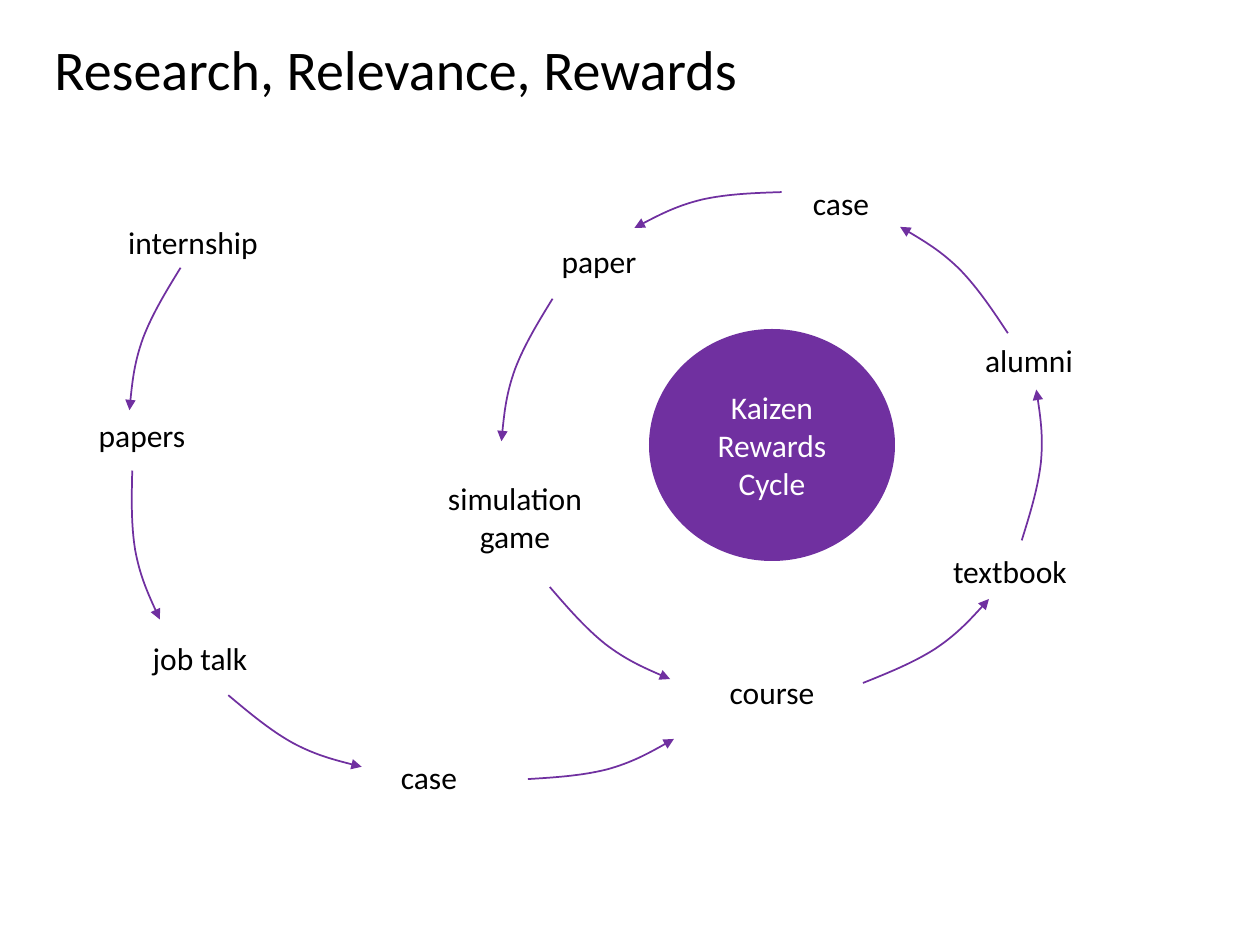
from lxml import etree
from pptx import Presentation
from pptx.dml.color import RGBColor
from pptx.enum.shapes import MSO_SHAPE
from pptx.enum.text import MSO_ANCHOR, MSO_AUTO_SIZE, PP_ALIGN
from pptx.oxml.ns import qn
from pptx.util import Emu, Pt

EMU_PER_PX = 914400 / 126
PURPLE = RGBColor(0x70, 0x30, 0xA0)
BLACK = RGBColor(0x00, 0x00, 0x00)
WHITE = RGBColor(0xFF, 0xFF, 0xFF)
FONT = "Calibri"
OVAL = MSO_SHAPE.OVAL
MIDDLE = MSO_ANCHOR.MIDDLE
FIT_TEXT = MSO_AUTO_SIZE.SHAPE_TO_FIT_TEXT
LEFT, CENTER = PP_ALIGN.LEFT, PP_ALIGN.CENTER

LABEL_WIDTH = 200
LINE_HEIGHT = 50
LABELS = [
    ("internship", 93, 217),
    ("papers", 42, 410),
    ("job talk", 100, 633),
    ("case", 329, 752),
    ("course", 672, 667),
    ("textbook", 910, 546),
    ("alumni", 929, 335),
    ("case", 741, 178),
    ("paper", 499, 236),
]

ARC_START = (0, 84)
ARC_CURVES = [
    [(25, 74), (50, 64), (72, 50)],
    [(93, 36), (110, 18), (126, 0)],
]
ARCS = [
    (863, 599, 0),
    (891, 238, 258.3),
    (645, 168, 200),
    (464, 328, 143.4),
    (547, 591, 71.1),
    (966, 423, 309.2),
    (92, 297, 143.4),
    (83, 503, 113.2),
    (232, 689, 61.9),
    (538, 717, 18.3),
]


def px(value):
    return Emu(round(value * EMU_PER_PX))


def style_paragraph(paragraph, size, color, alignment):
    paragraph.alignment = alignment
    paragraph.font.name = FONT
    paragraph.font.size = Pt(size)
    paragraph.font.color.rgb = color


def add_text(slide, text, left, top, width, height, size=18, alignment=CENTER, wrap=True):
    box = slide.shapes.add_textbox(px(left), px(top), px(width), px(height))
    frame = box.text_frame
    frame.word_wrap = wrap
    frame.auto_size = FIT_TEXT
    frame.text = text
    style_paragraph(frame.paragraphs[0], size, BLACK, alignment)


def add_circle(slide, text, left, top, width, height):
    circle = slide.shapes.add_shape(OVAL, px(left), px(top), px(width), px(height))
    circle.shadow.inherit = False
    circle.fill.solid()
    circle.fill.fore_color.rgb = PURPLE
    circle.line.fill.background()
    frame = circle.text_frame
    frame.word_wrap = True
    frame.vertical_anchor = MIDDLE
    frame.text = text
    for paragraph in frame.paragraphs:
        style_paragraph(paragraph, 18, WHITE, CENTER)


def bend_segments(shape):
    segments = list(shape.element.iter(qn("a:lnTo")))
    for first in range(0, len(segments), 3):
        curve = etree.Element(qn("a:cubicBezTo"))
        segments[first].addprevious(curve)
        for segment in segments[first:first + 3]:
            curve.append(segment[0])
            segment.getparent().remove(segment)


def add_arc_arrow(slide, left, top, rotation):
    builder = slide.shapes.build_freeform(*ARC_START, scale=EMU_PER_PX)
    for curve in ARC_CURVES:
        builder.add_line_segments(curve, close=False)
    arc = builder.convert_to_shape(px(left), px(top))
    bend_segments(arc)
    arc.rotation = rotation
    arc.shadow.inherit = False
    arc.fill.background()
    arc.line.color.rgb = PURPLE
    arc.line.width = Pt(1)
    etree.SubElement(arc.line._get_or_add_ln(), qn("a:tailEnd"), type="triangle")


def main():
    presentation = Presentation()
    presentation.slide_width = px(1260)
    presentation.slide_height = px(945)
    slide = presentation.slides.add_slide(presentation.slide_layouts[6])
    add_circle(slide, "Kaizen\nRewards\nCycle", 649, 329, 246, 232)
    add_text(slide, "Research, Relevance, Rewards", 42, 28, 737, 81, 32, LEFT, False)
    for text, left, top in LABELS:
        add_text(slide, text, left, top, LABEL_WIDTH, LINE_HEIGHT)
    add_text(slide, "simulation game", 415, 473, LABEL_WIDTH, 89)
    for left, top, rotation in ARCS:
        add_arc_arrow(slide, left, top, rotation)
    presentation.save("out.pptx")


if __name__ == "__main__":
    main()
